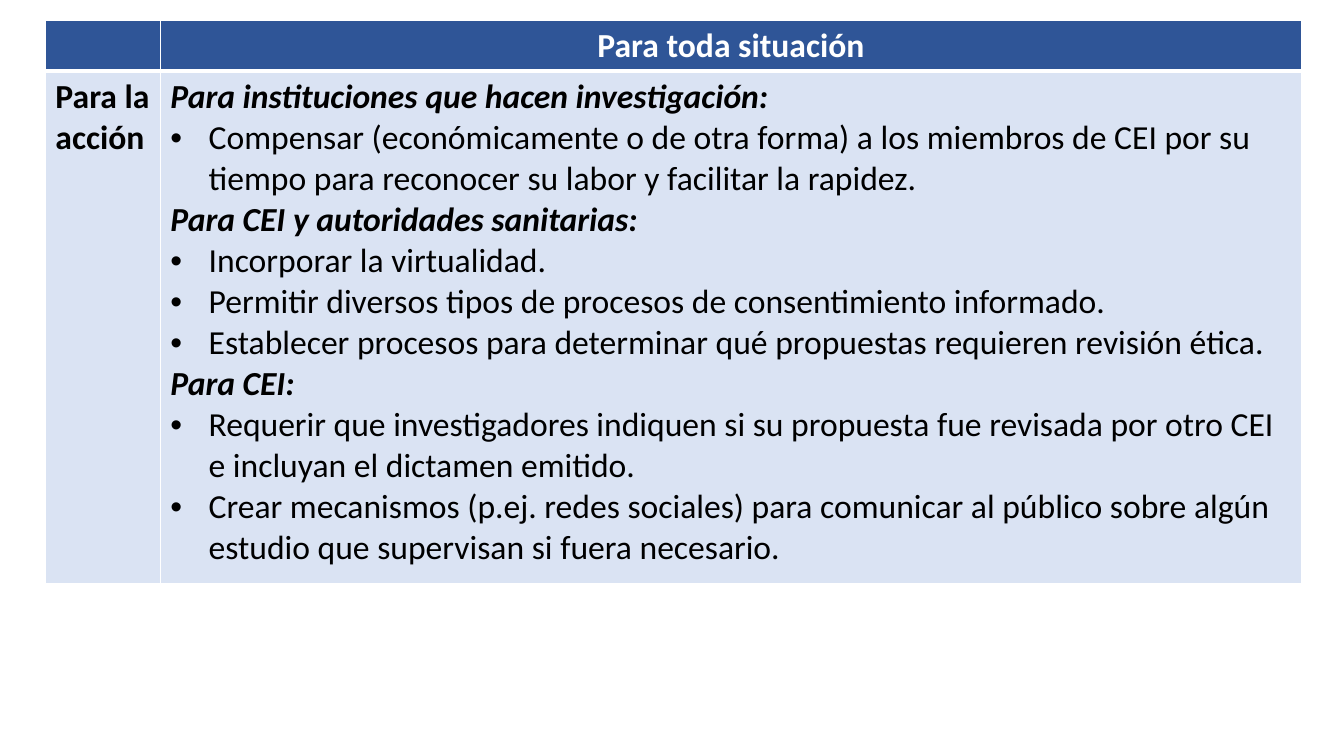
from dataclasses import dataclass

from lxml.etree import SubElement
from pptx import Presentation
from pptx.dml.color import RGBColor as Color
from pptx.enum.text import PP_ALIGN as Align
from pptx.oxml.ns import qn
from pptx.util import Pt

PX = 9144  # EMU per px, 100 px to the inch


@dataclass(frozen=True)
class Theme:
    font: str = "Calibri"
    size: int = 24
    header: str = "2F5597"
    body: str = "DAE3F3"
    light: str = "FFFFFF"
    dark: str = "000000"
    thin: int = 1
    thick: int = 3


THEME = Theme()

TITLE = "Para toda situación"
ROW_LABEL = "Para la acción"
ACTIONS = {
    "Para instituciones que hacen investigación:": [
        "Compensar (económicamente o de otra forma) a los miembros de CEI por su "
        "tiempo para reconocer su labor y facilitar la rapidez.",
    ],
    "Para CEI y autoridades sanitarias:": [
        "Incorporar la virtualidad.",
        "Permitir diversos tipos de procesos de consentimiento informado.",
        "Establecer procesos para determinar qué propuestas requieren revisión ética.",
    ],
    "Para CEI:": [
        "Requerir que investigadores indiquen si su propuesta fue revisada por otro CEI "
        "e incluyan el dictamen emitido.",
        "Crear mecanismos (p.ej. redes sociales) para comunicar al público sobre algún "
        "estudio que supervisan si fuera necesario.",
    ],
}


def style_cell(cell, fill, top, bottom):
    """Borders come first: the schema wants them ahead of the fill."""
    properties = cell._tc.get_or_add_tcPr()
    widths = {"a:lnL": THEME.thin, "a:lnR": THEME.thin, "a:lnT": top, "a:lnB": bottom}
    for tag, width in widths.items():
        line = SubElement(properties, qn(tag), w=str(Pt(width)))
        solid = SubElement(line, qn("a:solidFill"))
        SubElement(solid, qn("a:srgbClr"), val=THEME.light)
    cell.fill.solid()
    cell.fill.fore_color.rgb = Color.from_string(fill)


def add_bullet(para, indent):
    properties = para._p.get_or_add_pPr()
    properties.set("marL", str(indent * PX))
    properties.set("indent", str(-indent * PX))
    SubElement(properties, qn("a:buFont"), typeface="Arial")
    SubElement(properties, qn("a:buChar"), char="•")


def write(para, text, color, bold=False, italic=False):
    para.text = text
    font = para.font
    font.name, font.size = THEME.font, Pt(THEME.size)
    font.bold, font.italic = bold, italic
    font.color.rgb = Color.from_string(color)


def fill_actions(frame):
    lines = [(text, is_heading)
             for heading, items in ACTIONS.items()
             for text, is_heading in [(heading, True)] + [(item, False) for item in items]]
    for index, (text, is_heading) in enumerate(lines):
        para = frame.add_paragraph() if index else frame.paragraphs[0]
        if not is_heading:
            add_bullet(para, 38)
        write(para, text, THEME.dark, bold=is_heading, italic=is_heading)


def add_actions_table(page, left, top, width, height):
    label_width, header_height = 114, 49
    box = [length * PX for length in (left, top, width, height)]
    table = page.shapes.add_table(2, 2, *box).table
    table.horz_banding = False
    table.columns[0].width = label_width * PX
    table.columns[1].width = (width - label_width) * PX
    table.rows[0].height = header_height * PX
    table.rows[1].height = (height - header_height) * PX

    # Fills and borders
    for column in range(2):
        style_cell(table.cell(0, column), THEME.header, THEME.thin, THEME.thick)
        style_cell(table.cell(1, column), THEME.body, THEME.thick, THEME.thin)

    # Header and row label
    title = table.cell(0, 1).text_frame.paragraphs[0]
    title.alignment = Align.CENTER
    write(title, TITLE, THEME.light, bold=True)
    write(table.cell(1, 0).text_frame.paragraphs[0], ROW_LABEL, THEME.dark, bold=True)

    # Recommended actions
    fill_actions(table.cell(1, 1).text_frame)


def main():
    deck = Presentation()
    deck.slide_width, deck.slide_height = 1333 * PX, 750 * PX
    page = deck.slides.add_slide(deck.slide_layouts[6])
    add_actions_table(page, 45, 20, 1246, 557)
    deck.save("out.pptx")


if __name__ == "__main__":
    main()
